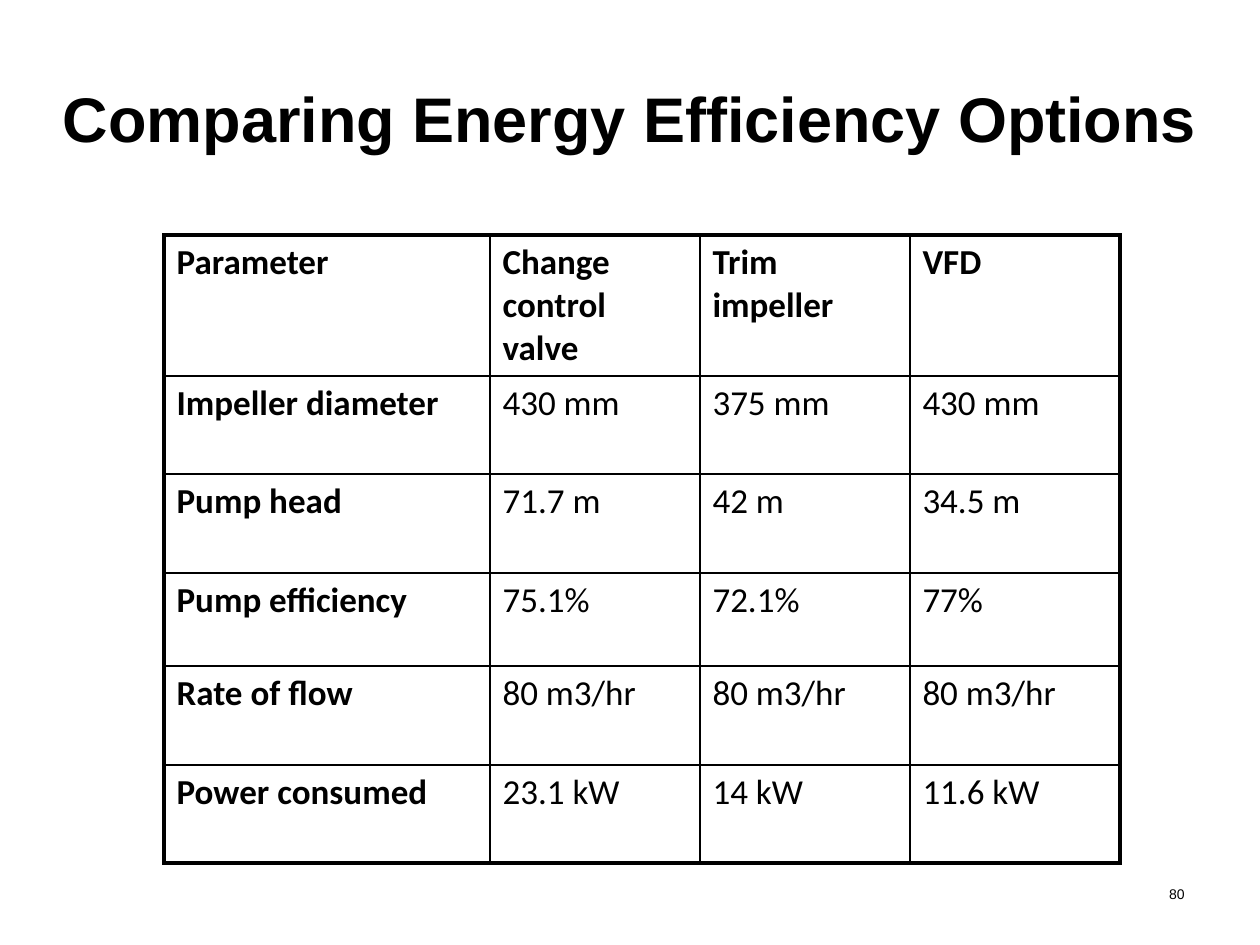
from dataclasses import dataclass

from lxml import etree
from pptx import Presentation
from pptx.dml.color import RGBColor
from pptx.enum.text import MSO_ANCHOR, PP_ALIGN
from pptx.oxml.ns import qn
from pptx.util import Emu, Pt

LEFT, MID, RIGHT = PP_ALIGN.LEFT, PP_ALIGN.CENTER, PP_ALIGN.RIGHT
TOP, CENTER = MSO_ANCHOR.TOP, MSO_ANCHOR.MIDDLE
BLACK = RGBColor(0, 0, 0)
SCALE = 914400 / 126
THIN, THICK = 1, 2.25
COLS = [326, 210, 210, 210]
ROWS = [141, 98, 99, 93, 99, 98]


@dataclass
class Box:
    x: int
    y: int
    w: int
    h: int


@dataclass
class Row:
    label: str
    valve: str
    trim: str
    drive: str

    def cells(self) -> list[str]:
        return [self.label, self.valve, self.trim, self.drive]


TITLE = Box(0, 38, 1260, 158)
NUMBER = Box(903, 879, 294, 47)
GRID = Box(164, 235, sum(COLS), sum(ROWS))
DATA = [
    Row("Parameter", "Change control valve", "Trim impeller", "VFD"),
    Row("Impeller diameter", "430 mm", "375 mm", "430 mm"),
    Row("Pump head", "71.7 m", "42 m", "34.5 m"),
    Row("Pump efficiency", "75.1%", "72.1%", "77%"),
    Row("Rate of flow", "80 m3/hr", "80 m3/hr", "80 m3/hr"),
    Row("Power consumed", "23.1 kW", "14 kW", "11.6 kW"),
]


def px(num: int) -> Emu:
    return Emu(round(num * SCALE))


def place(box: Box) -> list[Emu]:
    return [px(num) for num in (box.x, box.y, box.w, box.h)]


def write(frame, text: str, *, size: int, face: str = "Arial",
          bold: bool = False, align=LEFT) -> None:
    frame.word_wrap = True
    para = frame.paragraphs[0]
    para.alignment = align
    run = para.add_run()
    run.text = text
    run.font.name = face
    run.font.size = Pt(size)
    run.font.bold = bold
    run.font.color.rgb = BLACK


def label(slide, box: Box, text: str, *, anchor=TOP, **style) -> None:
    frame = slide.shapes.add_textbox(*place(box)).text_frame
    write(frame, text, **style)
    frame.vertical_anchor = anchor


def edge(cell, side: str, width: float) -> None:
    line = etree.SubElement(cell._tc.get_or_add_tcPr(), qn(f"a:ln{side}"),
                            w=str(Pt(width)))
    fill = etree.SubElement(line, qn("a:solidFill"))
    etree.SubElement(fill, qn("a:srgbClr"), val=str(BLACK))


def grid(slide, box: Box, data: list[Row]) -> None:
    table = slide.shapes.add_table(len(ROWS), len(COLS), *place(box)).table
    table.first_row = table.horz_banding = False
    for col, width in zip(table.columns, COLS):
        col.width = px(width)
    for row, height in zip(table.rows, ROWS):
        row.height = px(height)
    for r, row in enumerate(data):
        for c, text in enumerate(row.cells()):
            cell = table.cell(r, c)
            write(cell.text_frame, text, size=20, face="Calibri",
                  bold=r == 0 or c == 0)
            rims = {"L": c == 0, "R": c == len(COLS) - 1,
                    "T": r == 0, "B": r == len(ROWS) - 1}
            for side, outer in rims.items():
                edge(cell, side, THICK if outer else THIN)
            cell.fill.background()


def main() -> None:
    deck = Presentation()
    deck.slide_width, deck.slide_height = px(1260), px(945)
    slide = deck.slides.add_slide(deck.slide_layouts[6])
    label(slide, TITLE, "Comparing Energy Efficiency Options",
          size=36, bold=True, align=MID, anchor=CENTER)
    label(slide, NUMBER, "80", size=8, align=RIGHT)
    grid(slide, GRID, DATA)
    deck.save("out.pptx")


if __name__ == "__main__":
    main()
